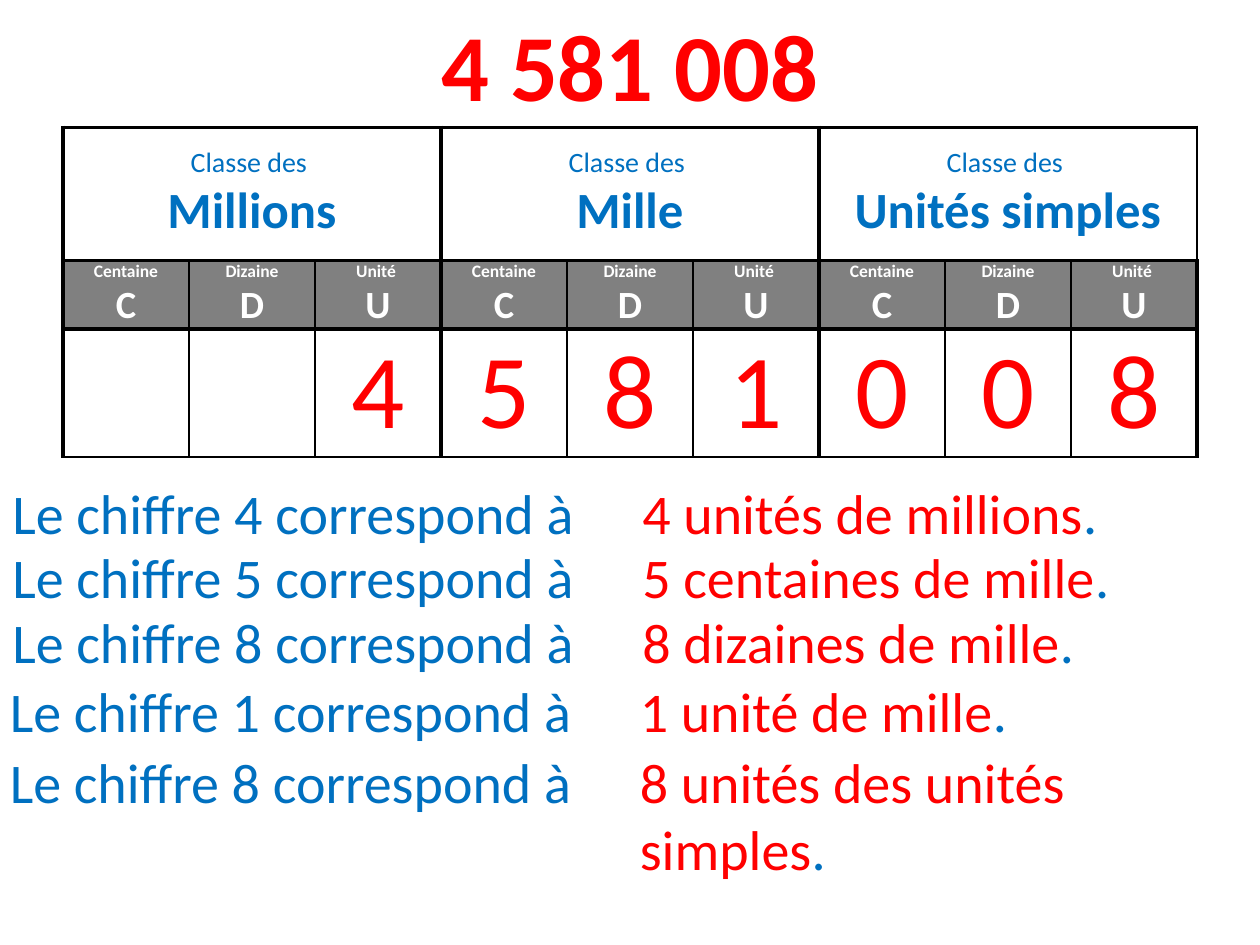
"""Build a place-value slide that breaks down the number 4 581 008."""
from lxml import etree
from pptx import Presentation, util as u
from pptx.dml.color import RGBColor
from pptx.enum import text
from pptx.oxml import ns

COLORS = {"answer": "FF0000", "prompt": "0070C0", "grid": "000000",
          "band": "808080", "paper": "FFFFFF"}
FONT = "Calibri"
THICK, THIN = 2.25, 1
CLASSES = ["Millions", "Mille", "Unités simples"]
RANKS = [("Centaine", "C"), ("Dizaine", "D"), ("Unité ", "U")]
DIGITS = "4581008"
COLUMNS = len(CLASSES) * len(RANKS)
ROW_HEIGHTS = [1.06, 0.53, 1.01]
ANSWERS = [
    ("4", "4 unités de millions", 0, 3.75, 0.64),
    ("5", "5 centaines de mille", 0, 4.26, 0.64),
    ("8", "8 dizaines de mille", 0, 4.77, 0.64),
    ("1", "1 unité de mille", -0.02, 5.32, 0.64),
    ("8", "8 unités des unités simples", -0.02, 5.88, 1.18),
]


def rgb(role):
    return RGBColor.from_string(COLORS[role])


def style(font, size, role, bold=False):
    font.name, font.size, font.bold = FONT, u.Pt(size), bold
    font.color.rgb = rgb(role)


def add_title(slide, number):
    title = slide.shapes.title
    title.left, title.top = 0, 0
    title.width, title.height = u.Inches(10), u.Inches(1.01)
    frame = title.text_frame
    frame.text = number
    frame.vertical_anchor = text.MSO_ANCHOR.MIDDLE
    frame.paragraphs[0].alignment = text.PP_ALIGN.CENTER
    style(frame.paragraphs[0].font, 54, "answer", True)


def add_sentence(slide, box, parts):
    """Add a text box whose runs are (words, colour role) pairs."""
    frame = slide.shapes.add_textbox(*map(u.Inches, box)).text_frame
    frame.word_wrap = True
    for words, role in parts:
        run = frame.paragraphs[0].add_run()
        run.text = words
        style(run.font, 32, role)


def set_borders(cell, widths):
    """Draw the left, right, top and bottom borders in that order."""
    properties = cell._tc.get_or_add_tcPr()
    for side, width in zip("LRTB", widths):
        line = etree.SubElement(properties, ns.qn(f"a:ln{side}"), w=str(u.Pt(width)))
        fill = etree.SubElement(line, ns.qn("a:solidFill"))
        etree.SubElement(fill, ns.qn("a:srgbClr"), val=COLORS["grid"])


def write_cell(cell, lines):
    """Write (words, size, colour role, bold) lines, centred in the cell."""
    cell.vertical_anchor = text.MSO_ANCHOR.MIDDLE
    cell.margin_left = cell.margin_right = u.Inches(0.06)
    cell.margin_top = cell.margin_bottom = 0
    frame = cell.text_frame
    for index, (words, *look) in enumerate(lines):
        paragraph = frame.add_paragraph() if index else frame.paragraphs[0]
        paragraph.text = words
        paragraph.alignment = text.PP_ALIGN.CENTER
        style(paragraph.font, *look)


def cell_lines(row, column):
    group, rank = divmod(column, len(RANKS))
    if row == 0:
        if rank:
            return []
        return [("Classe des ", 16, "prompt", False),
                (CLASSES[group], 29, "prompt", True)]
    if row == 1:
        name, letter = RANKS[rank]
        return [(name, 10, "paper", True), (letter, 22, "paper", True)]
    digit = DIGITS.rjust(COLUMNS)[column].strip()
    return [(digit, 60, "answer", False)] if digit else []


def add_place_table(slide):
    frame = slide.shapes.add_table(
        len(ROW_HEIGHTS), COLUMNS, u.Inches(0.5), u.Inches(1.01),
        u.Inches(COLUMNS), u.Inches(sum(ROW_HEIGHTS)))
    table = frame.table
    table.first_row = table.horz_banding = False
    for row, height in enumerate(ROW_HEIGHTS):
        table.rows[row].height = u.Inches(height)
        for column in range(COLUMNS):
            cell, rank = table.cell(row, column), column % len(RANKS)
            set_borders(cell, [
                THICK if rank == 0 else THIN,
                THICK if rank == len(RANKS) - 1 else THIN,
                THICK,
                THIN if row == len(ROW_HEIGHTS) - 1 else THICK])
            cell.fill.solid()
            cell.fill.fore_color.rgb = rgb("band" if row == 1 else "paper")
            write_cell(cell, cell_lines(row, column))
    for start in range(0, COLUMNS, len(RANKS)):
        table.cell(0, start).merge(table.cell(0, start + len(RANKS) - 1))


def main():
    deck = Presentation()
    deck.slide_width, deck.slide_height = u.Inches(10), u.Inches(7.5)
    slide = deck.slides.add_slide(deck.slide_layouts[5])
    add_title(slide, "4 581 008")
    add_place_table(slide)
    for digit, answer, shift, top, height in ANSWERS:
        add_sentence(slide, (shift, top, 5.16, 0.64),
                     [(f"Le chiffre {digit} correspond à", "prompt")])
        add_sentence(slide, (5 + shift, top, 5, height),
                     [(answer, "answer"), (".", "prompt")])
    deck.save("out.pptx")


if __name__ == "__main__":
    main()
